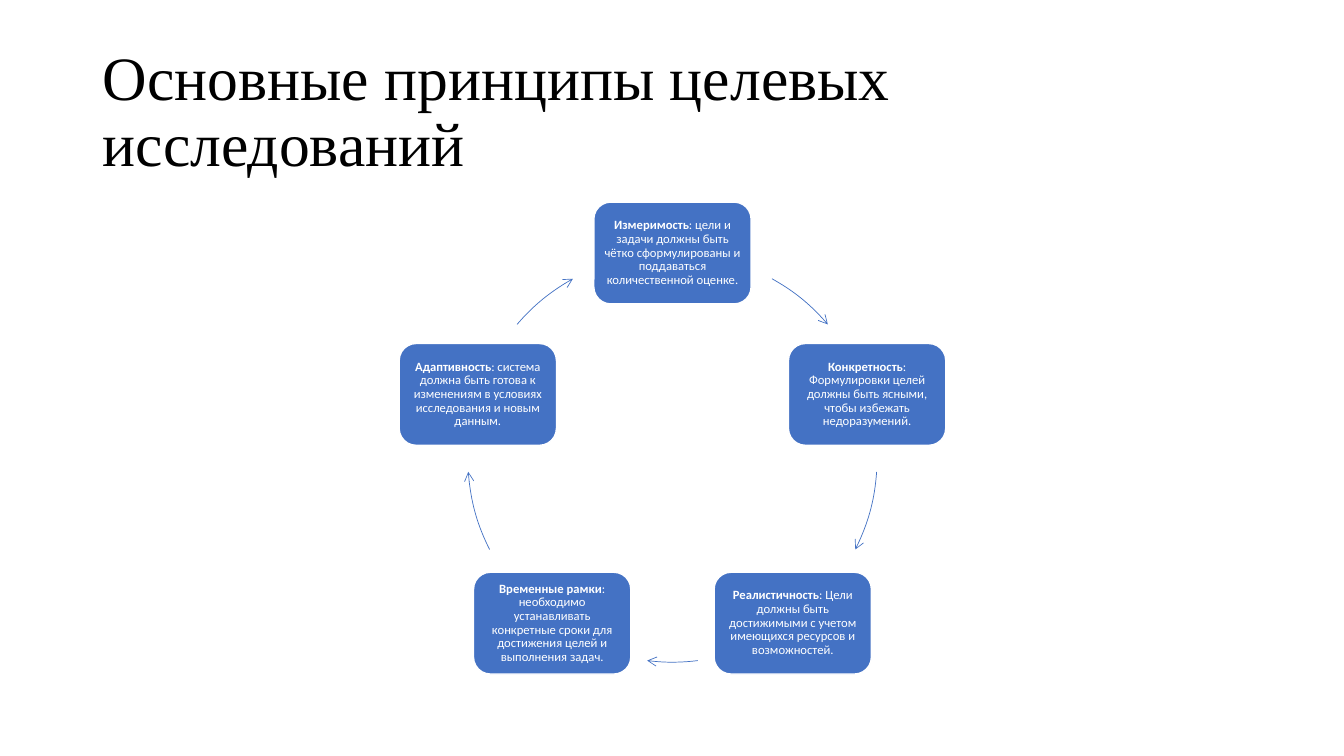
import math

from lxml import etree
from pptx import Presentation
from pptx.dml.color import RGBColor
from pptx.enum.shapes import MSO_SHAPE
from pptx.enum.text import MSO_ANCHOR, MSO_AUTO_SIZE, PP_ALIGN
from pptx.oxml.ns import qn
from pptx.util import Inches, Pt

ROUNDED, ARC = MSO_SHAPE.ROUNDED_RECTANGLE, MSO_SHAPE.ARC
MIDDLE, NO_FIT = MSO_ANCHOR.MIDDLE, MSO_AUTO_SIZE.NONE
LEFT, CENTER = PP_ALIGN.LEFT, PP_ALIGN.CENTER

TITLE = "Основные принципы целевых исследований"
# Clockwise from the top
PRINCIPLES = [
    ("Измеримость", ": цели и задачи должны быть чётко сформулированы и "
                    "поддаваться количественной оценке."),
    ("Конкретность", ": Формулировки целей должны быть ясными, "
                     "чтобы избежать недоразумений."),
    ("Реалистичность", ": Цели должны быть достижимыми с учетом имеющихся "
                       "ресурсов и возможностей."),
    ("Временные рамки", ": необходимо устанавливать конкретные сроки для "
                        "достижения целей и выполнения задач."),
    ("Адаптивность", ": система должна быть готова к изменениям в условиях "
                     "исследования и новым данным."),
]
# Start and end of each arrow, in degrees clockwise from the top
ARROWS = [(29.1, 49.4), (94, 116.7), (172.9, 187.1), (243.3, 266), (310.6, 330.9)]
COLORS = {"blue": "4472C4", "white": "FFFFFF", "black": "000000"}

CENTER_X, CENTER_Y, RADIUS = 6.67, 4.54, 2.03
BOX_W, BOX_H = 1.56, 1.01


def rgb(name):
    return RGBColor.from_string(COLORS[name])


def write(sp, runs, size, font, color, align, inset=None):
    """Fill a shape with one paragraph of (text, bold) runs."""
    tf = sp.text_frame
    tf.word_wrap = True
    tf.auto_size = NO_FIT
    tf.vertical_anchor = MIDDLE
    if inset is not None:
        tf.margin_left = tf.margin_right = Inches(inset)
        tf.margin_top = tf.margin_bottom = Inches(inset)
    p = tf.paragraphs[0]
    p.alignment = align
    p.line_spacing = 0.9
    for text, bold in runs:
        r = p.add_run()
        r.text = text
        r.font.size, r.font.name, r.font.bold = Pt(size), font, bold
        r.font.color.rgb = rgb(color)


def add_centered(slide, kind, x, y, w, h, line, line_width):
    sp = slide.shapes.add_shape(kind, Inches(x - w / 2), Inches(y - h / 2),
                                Inches(w), Inches(h))
    sp.shadow.inherit = False
    sp.line.color.rgb = rgb(line)
    sp.line.width = Pt(line_width)
    return sp


def add_principle(slide, angle, name, text):
    x = CENTER_X + RADIUS * math.sin(math.radians(angle))
    y = CENTER_Y - RADIUS * math.cos(math.radians(angle))
    sp = add_centered(slide, ROUNDED, x, y, BOX_W, BOX_H, "white", 1)
    sp.fill.solid()
    sp.fill.fore_color.rgb = rgb("blue")
    write(sp, [(name, True), (text, False)], 9, "Calibri", "white", CENTER, 0.04)


def add_arc_arrow(slide, start, end):
    sp = add_centered(slide, ARC, CENTER_X, CENTER_Y, 2 * RADIUS, 2 * RADIUS, "blue", 0.5)
    sp.fill.background()
    # Arc angles count from the right, in units of 1/60000 degree
    for i, angle in enumerate((start, end)):
        sp.adjustments[i] = (angle - 90) % 360 * 0.6
    etree.SubElement(sp.line._get_or_add_ln(), qn("a:tailEnd"), type="arrow")


def main():
    prs = Presentation()
    prs.slide_width, prs.slide_height = Inches(13.33), Inches(7.5)
    slide = prs.slides.add_slide(prs.slide_layouts[5])

    title = slide.shapes.title
    title.left, title.top = Inches(0.92), Inches(0.4)
    title.width, title.height = Inches(11.5), Inches(1.45)
    write(title, [(TITLE, False)], 44, "Times New Roman", "black", LEFT)

    step = 360 / len(PRINCIPLES)
    for i, ((name, text), (start, end)) in enumerate(zip(PRINCIPLES, ARROWS)):
        add_principle(slide, i * step, name, text)
        add_arc_arrow(slide, start, end)

    prs.save("out.pptx")


if __name__ == "__main__":
    main()
